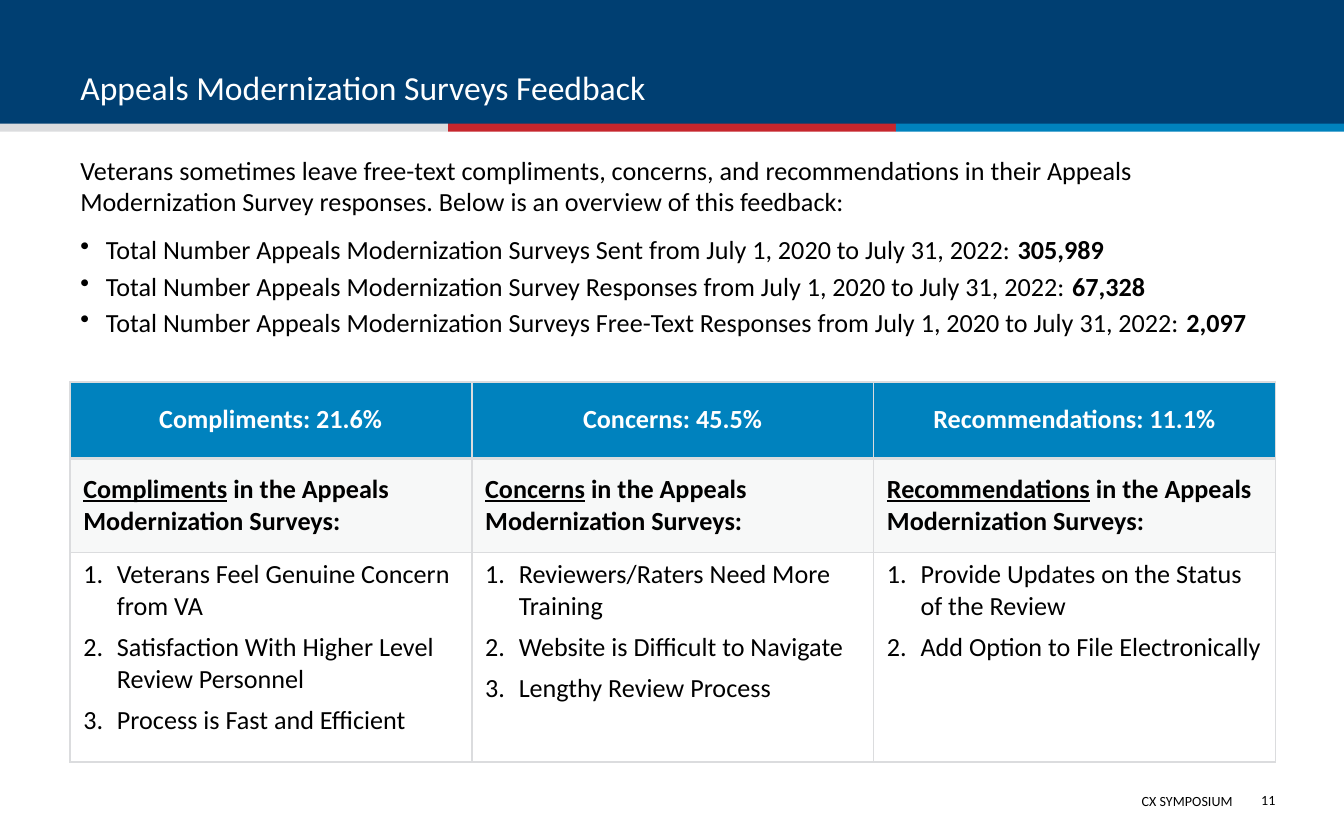
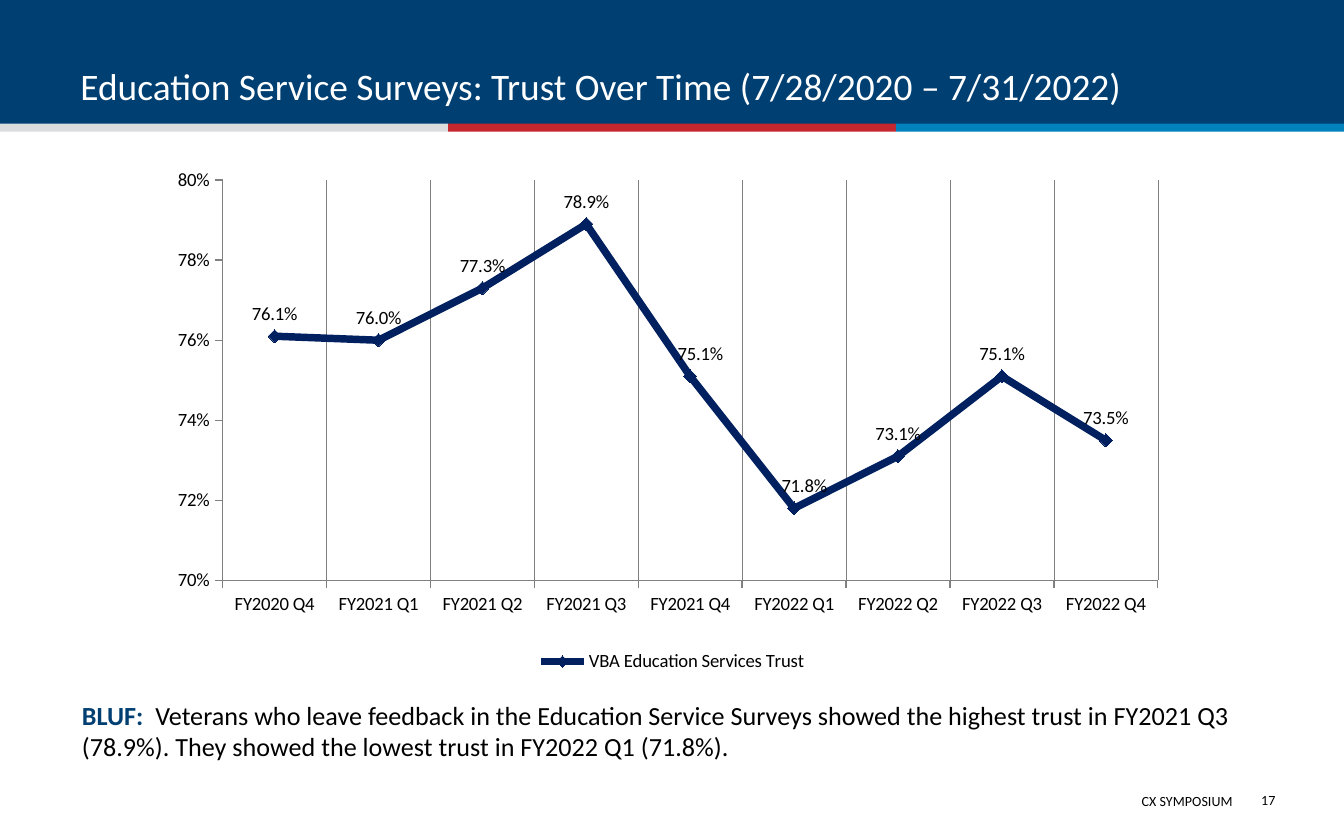
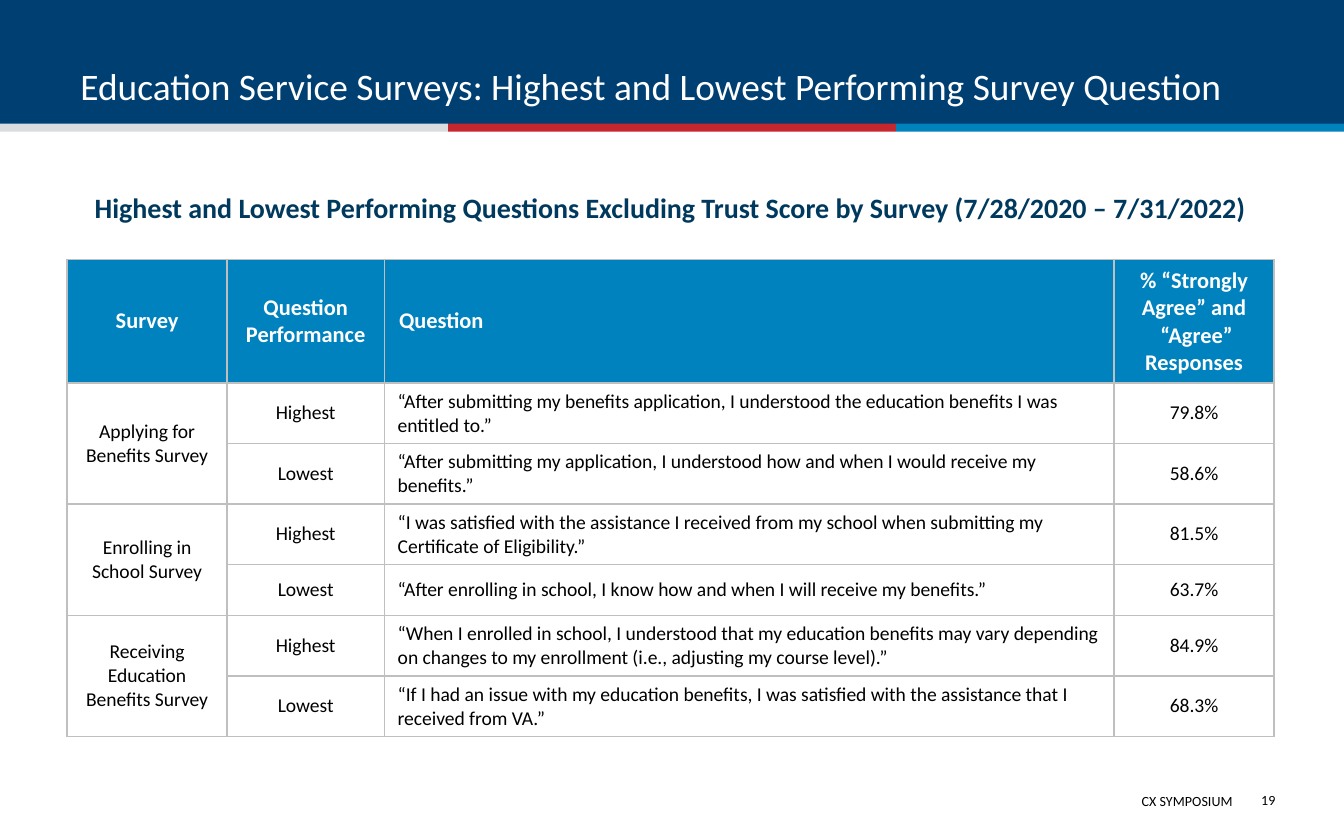
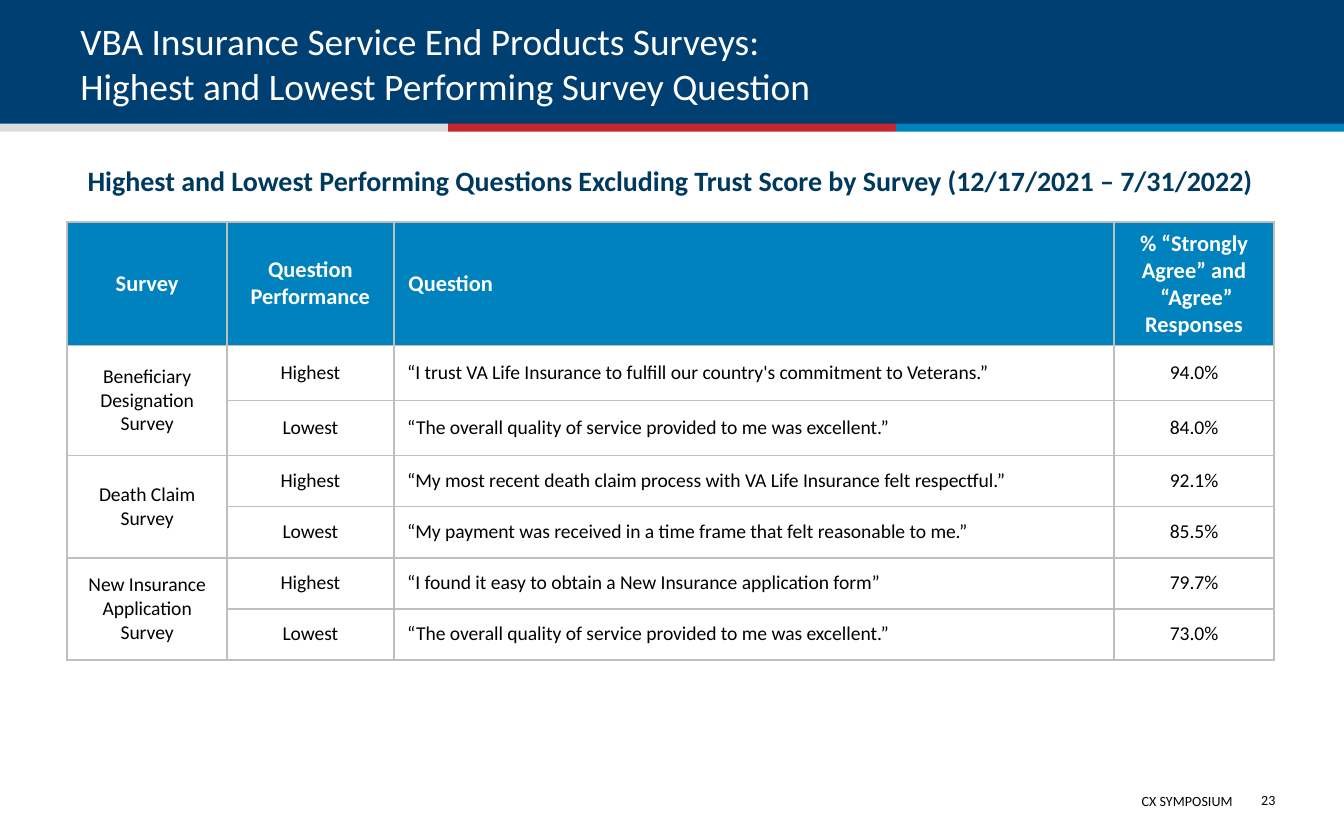
from lxml.etree import SubElement
from pptx import Presentation
from pptx.chart.data import CategoryChartData
from pptx.dml.color import RGBColor
from pptx.enum.chart import (XL_CHART_TYPE, XL_LABEL_POSITION, XL_LEGEND_POSITION,
                             XL_MARKER_STYLE, XL_TICK_MARK)
from pptx.enum.shapes import MSO_SHAPE
from pptx.enum.text import MSO_ANCHOR, PP_ALIGN
from pptx.oxml import parse_xml
from pptx.oxml.ns import nsdecls, qn
from pptx.util import Inches, Pt

FONT = "Calibri"
COLOURS = {
    "navy": "003F72",
    "silver": "DBDCDE",
    "red": "C6262D",
    "blue": "0082BD",
    "header": "0082BE",
    "heading": "00395E",
    "rule": "BFBFBF",
    "series": "002060",
    "axis": "808080",
    "white": "FFFFFF",
    "black": "000000",
}
CELL_INSETS = (0.1, 0.05, 0.1, 0.05)
HEADER_INSETS = (0.11, 0.06, 0.11, 0.06)


def colour(name):
    return RGBColor.from_string(COLOURS[name])


def style_font(font, size, name="black", bold=False):
    font.name = FONT
    font.size = Pt(size)
    font.bold = bold
    font.color.rgb = colour(name)


def add_span(para, text, size, name="black", bold=False, underline=False):
    """Add text to a paragraph, turning each newline into a line break."""
    for index, line in enumerate(text.split("\n")):
        if index:
            para.add_line_break()
        span = para.add_run()
        span.text = line
        style_font(span.font, size, name, bold)
        if underline:
            span.font.underline = True


def set_bullet(para, indent, tag, **attributes):
    properties = para._p.get_or_add_pPr()
    properties.set("marL", str(Inches(indent)))
    properties.set("indent", str(-Inches(indent)))
    SubElement(properties, qn(tag), **attributes)


def set_insets(target, insets):
    (target.margin_left, target.margin_top,
     target.margin_right, target.margin_bottom) = map(Inches, insets)


def add_box(page, left, top, width, height, anchor=MSO_ANCHOR.TOP, insets=CELL_INSETS):
    """Add a wrapping text box and return its text frame."""
    box = page.shapes.add_textbox(Inches(left), Inches(top), Inches(width), Inches(height))
    frame = box.text_frame
    frame.word_wrap = True
    frame.vertical_anchor = anchor
    set_insets(frame, insets)
    return frame


def add_band(page, left, top, width, height, name):
    band = page.shapes.add_shape(MSO_SHAPE.RECTANGLE, Inches(left), Inches(top),
                                 Inches(width), Inches(height))
    band.shadow.inherit = False
    band.fill.solid()
    band.fill.fore_color.rgb = colour(name)
    band.line.fill.background()


def add_page(deck, title, number, title_size=20):
    """Add a slide with the shared bands, title, footer and page number."""
    page = deck.slides.add_slide(deck.slide_layouts[6])
    add_band(page, 0, 0, 10, 0.95, "navy")
    for index, name in enumerate(("silver", "red", "blue")):
        add_band(page, index * 10 / 3, 0.92, 10 / 3, 0.06, name)

    footer = add_box(page, 4.14, 5.85, 5.13, 0.23).paragraphs[0]
    footer.alignment = PP_ALIGN.RIGHT
    add_span(footer, "CX SYMPOSIUM", 7.5)

    heading = add_box(page, 0.5, 0.11, 9, 0.74, MSO_ANCHOR.BOTTOM).paragraphs[0]
    add_span(heading, title, title_size, "white")

    page_number = add_box(page, 9.22, 5.79, 0.27, 0.33, MSO_ANCHOR.MIDDLE,
                          (0, 0, 0, 0)).paragraphs[0]
    page_number.alignment = PP_ALIGN.RIGHT
    add_span(page_number, str(number), 7.5)
    return page


def set_borders(cell, name, bottom_width=1):
    properties = cell._tc.get_or_add_tcPr()
    for index, side in enumerate("LRTB"):
        width = Pt(bottom_width if side == "B" else 1)
        properties.insert(index, parse_xml(
            f'<a:ln{side} {nsdecls("a")} w="{width}"><a:solidFill>'
            f'<a:srgbClr val="{COLOURS[name]}"/></a:solidFill></a:ln{side}>'))


def fill_cell(cell, name, opacity=100):
    cell.fill.solid()
    cell.fill.fore_color.rgb = colour(name)
    if opacity < 100:
        shade = cell._tc.tcPr.find(qn("a:solidFill")).find(qn("a:srgbClr"))
        SubElement(shade, qn("a:alpha"), val=str(opacity * 1000))


def add_grid(page, left, top, widths, heights, border):
    """Add a table with unfilled, bordered and vertically centred cells."""
    frame = page.shapes.add_table(len(heights), len(widths), Inches(left), Inches(top),
                                  Inches(sum(widths)), Inches(sum(heights)))
    table = frame.table
    table.first_row = False
    table.horz_banding = False
    for column, width in zip(table.columns, widths):
        column.width = Inches(width)
    for row, height in zip(table.rows, heights):
        row.height = Inches(height)
    for cell in table.iter_cells():
        cell.fill.background()
        cell.vertical_anchor = MSO_ANCHOR.MIDDLE
        set_insets(cell, CELL_INSETS)
        set_borders(cell, border)
    return table


def write_cell(cell, text, size, name="black", bold=False, centred=True):
    para = cell.text_frame.paragraphs[0]
    if centred:
        para.alignment = PP_ALIGN.CENTER
    add_span(para, text, size, name, bold)


def add_feedback_table(page, topics):
    """Add one column for each (topic, share, numbered remarks)."""
    table = add_grid(page, 0.52, 2.84, [2.99] * 3, [0.57, 0.7, 1.56], "silver")
    for column, (topic, share, remarks) in enumerate(topics):
        header, subject, listing = (table.cell(row, column) for row in range(3))
        fill_cell(header, "header")
        write_cell(header, f"{topic}: {share}", 14, "white", bold=True)
        for line in header._tc.tcPr.findall(qn("a:lnB")):
            line.set("w", str(Pt(2)))

        fill_cell(subject, "silver", opacity=20)
        para = subject.text_frame.paragraphs[0]
        add_span(para, topic, 14, bold=True, underline=True)
        add_span(para, " in the Appeals Modernization Surveys:", 14, bold=True)

        listing.vertical_anchor = MSO_ANCHOR.TOP
        frame = listing.text_frame
        for index, remark in enumerate(remarks):
            para = frame.add_paragraph() if index else frame.paragraphs[0]
            para.space_after = Pt(5)
            set_bullet(para, 0.25, "a:buAutoNum", type="arabicPeriod")
            add_span(para, remark, 14)


def add_question_table(page, top, widths, heights, surveys):
    """Add a table from (survey, (highest, score), (lowest, score)) entries."""
    table = add_grid(page, 0.5, top, widths, heights, "rule")
    headers = ("Survey", "Question Performance", "Question",
               "% “Strongly Agree” and\n “Agree” Responses")
    for column, text in enumerate(headers):
        cell = table.cell(0, column)
        fill_cell(cell, "header")
        set_insets(cell, HEADER_INSETS)
        write_cell(cell, text, 12, "white", bold=True, centred=text != "Question")

    for index, (survey, *results) in enumerate(surveys):
        first = 1 + 2 * index
        table.cell(first, 0).merge(table.cell(first + 1, 0))
        write_cell(table.cell(first, 0), survey, 10.5)
        for offset, (question, score) in enumerate(results):
            row = first + offset
            write_cell(table.cell(row, 1), ("Highest", "Lowest")[offset], 10.5)
            write_cell(table.cell(row, 2), f"“{question}”", 10.5, centred=False)
            write_cell(table.cell(row, 3), score, 10.5)


def add_table_heading(page, top, period):
    para = add_box(page, 0.5, top, 8.98, 0.35).paragraphs[0]
    para.alignment = PP_ALIGN.CENTER
    add_span(para, "Highest and Lowest Performing Questions Excluding Trust Score "
                   f"by Survey ({period})", 15, "heading", bold=True)


def layout_xml(x, y, width=None, height=None):
    """Return a chart layout: an inner plot area, or a label offset without a size."""
    parts = ""
    if width:
        parts = ('<c:layoutTarget val="inner"/><c:xMode val="edge"/><c:yMode val="edge"/>')
    parts += f'<c:x val="{x}"/><c:y val="{y}"/>'
    if width:
        parts += f'<c:w val="{width}"/><c:h val="{height}"/>'
    return parse_xml(f'<c:layout {nsdecls("c")}><c:manualLayout>{parts}'
                     '</c:manualLayout></c:layout>')


def style_line(line, name, width):
    line.color.rgb = colour(name)
    line.width = Pt(width)


def style_axis(axis):
    style_font(axis.tick_labels.font, 10)
    style_line(axis.format.line, "axis", 0.75)
    axis.major_tick_mark = XL_TICK_MARK.OUTSIDE
    axis.minor_tick_mark = XL_TICK_MARK.NONE


def add_trust_chart(page, quarters, trust):
    data = CategoryChartData(number_format="0.0%")
    data.categories = quarters
    data.add_series("VBA Education Services Trust", trust)
    chart = page.shapes.add_chart(XL_CHART_TYPE.LINE_MARKERS, Inches(1.26), Inches(1.19),
                                  Inches(7.49), Inches(3.85), data).chart
    style_font(chart.font, 10)
    chart.has_title = False
    chart.has_legend = True
    chart.legend.position = XL_LEGEND_POSITION.BOTTOM
    chart.legend.include_in_layout = False
    style_font(chart.legend.font, 10)

    plot_area = chart._chartSpace.chart.plotArea
    for layout in plot_area.findall(qn("c:layout")):
        plot_area.remove(layout)
    plot_area.insert(0, layout_xml(0.053, 0.039, 0.929, 0.774))

    style_axis(chart.category_axis)
    chart.category_axis.has_major_gridlines = True
    style_line(chart.category_axis.major_gridlines.format.line, "axis", 0.25)
    values = chart.value_axis
    style_axis(values)
    values.has_major_gridlines = False
    values.minimum_scale, values.maximum_scale, values.major_unit = 0.7, 0.8, 0.02
    values.tick_labels.number_format = "0%"
    values.tick_labels.number_format_is_linked = False

    plot = chart.plots[0]
    plot.vary_by_categories = False
    series = plot.series[0]
    series.smooth = False
    style_line(series.format.line, "series", 4)
    marker = series.marker
    marker.style = XL_MARKER_STYLE.DIAMOND
    marker.size = 7
    marker.format.fill.solid()
    marker.format.fill.fore_color.rgb = colour("series")
    marker.format.line.color.rgb = colour("series")

    labels = series.data_labels
    labels.show_value = True
    labels.position = XL_LABEL_POSITION.ABOVE
    labels.number_format = "0.0%"
    labels.number_format_is_linked = False
    style_font(labels.font, 10)
    for index in (4, 5):
        label = series.points[index].data_label
        style_font(label.font, 10)
        label.position = XL_LABEL_POSITION.ABOVE
        labels._element.find(f'{qn("c:dLbl")}[{index - 3}]').insert(1, layout_xml(0.01, 0))


def build_feedback(deck):
    page = add_page(deck, "Appeals Modernization Surveys Feedback", 11, title_size=18)
    frame = add_box(page, 0.5, 1.1, 9, 1.6)
    intro = frame.paragraphs[0]
    intro.space_before = Pt(2.8)
    intro.space_after = Pt(6)
    add_span(intro, "Veterans sometimes leave free-text compliments, concerns, and "
                    "recommendations in their Appeals Modernization Survey responses. "
                    "Below is an overview of this feedback:", 14)
    totals = (("Surveys Sent", "305,989"), ("Survey Responses", "67,328"),
              ("Surveys Free-Text Responses", "2,097"))
    for measure, total in totals:
        para = frame.add_paragraph()
        para.space_before = Pt(2.8)
        set_bullet(para, 0.19, "a:buChar", char="•")
        add_span(para, f"Total Number Appeals Modernization {measure} "
                       "from July 1, 2020 to July 31, 2022: ", 14)
        add_span(para, total, 14, bold=True)
    add_feedback_table(page, (
        ("Compliments", "21.6%", ("Veterans Feel Genuine Concern from VA",
                                  "Satisfaction With Higher Level Review Personnel",
                                  "Process is Fast and Efficient")),
        ("Concerns", "45.5%", ("Reviewers/Raters Need More Training",
                               "Website is Difficult to Navigate",
                               "Lengthy Review Process")),
        ("Recommendations", "11.1%", ("Provide Updates on the Status of the Review",
                                      "Add Option to File Electronically")),
    ))


def build_trust(deck):
    page = add_page(deck, "Education Service Surveys: Trust Over Time "
                          "(7/28/2020 – 7/31/2022)", 17)
    para = add_box(page, 0.5, 5.19, 8.98, 0.58, MSO_ANCHOR.MIDDLE,
                   (0.11, 0.01, 0.1, 0.1)).paragraphs[0]
    add_span(para, "BLUF:  ", 14, "navy", bold=True)
    add_span(para, "Veterans who leave feedback in the Education Service Surveys showed "
                   "the highest trust in FY2021 Q3 (78.9%). They showed the lowest trust "
                   "in FY2022 Q1 (71.8%).", 14)
    quarters = ["FY2020 Q4"] + [f"FY{year} Q{quarter}" for year in (2021, 2022)
                                for quarter in range(1, 5)]
    add_trust_chart(page, quarters,
                    (0.761, 0.76, 0.773, 0.789, 0.751, 0.718, 0.731, 0.751, 0.735))


def build_education(deck):
    page = add_page(deck, "Education Service Surveys: Highest and Lowest Performing "
                          "Survey Question", 19)
    add_table_heading(page, 1.37, "7/28/2020 – 7/31/2022")
    add_question_table(
        page, 1.93, [1.19, 1.17, 5.43, 1.19], [0.91, 0.45, 0.45, 0.45, 0.38, 0.45, 0.45], (
            ("Applying for Benefits Survey",
             ("After submitting my benefits application, I understood the education "
              "benefits I was entitled to.", "79.8%"),
             ("After submitting my application, I understood how and when I would "
              "receive my benefits.", "58.6%")),
            ("Enrolling in School Survey",
             ("I was satisfied with the assistance I received from my school when "
              "submitting my Certificate of Eligibility.", "81.5%"),
             ("After enrolling in school, I know how and when I will receive my "
              "benefits.", "63.7%")),
            ("Receiving Education Benefits Survey",
             ("When I enrolled in school, I understood that my education benefits may "
              "vary depending on changes to my enrollment (i.e., adjusting my course "
              "level).", "84.9%"),
             ("If I had an issue with my education benefits, I was satisfied with the "
              "assistance that I received from VA.", "68.3%")),
        ))


def build_insurance(deck):
    page = add_page(deck, "VBA Insurance Service End Products Surveys:\n"
                          "Highest and Lowest Performing Survey Question", 23)
    add_table_heading(page, 1.17, "12/17/2021 – 7/31/2022")
    quality = "The overall quality of service provided to me was excellent."
    add_question_table(
        page, 1.65, [1.19, 1.24, 5.36, 1.19], [0.91] + [0.41] * 2 + [0.38] * 4, (
            ("Beneficiary Designation Survey",
             ("I trust VA Life Insurance to fulfill our country's commitment to "
              "Veterans.", "94.0%"),
             (quality, "84.0%")),
            ("Death Claim Survey",
             ("My most recent death claim process with VA Life Insurance felt "
              "respectful.", "92.1%"),
             ("My payment was received in a time frame that felt reasonable to me.",
              "85.5%")),
            ("New Insurance Application Survey",
             ("I found it easy to obtain a New Insurance application form", "79.7%"),
             (quality, "73.0%")),
        ))


def main():
    deck = Presentation()
    deck.slide_width = Inches(10)
    deck.slide_height = Inches(6.25)
    build_feedback(deck)
    build_trust(deck)
    build_education(deck)
    build_insurance(deck)
    deck.save("out.pptx")


if __name__ == "__main__":
    main()
